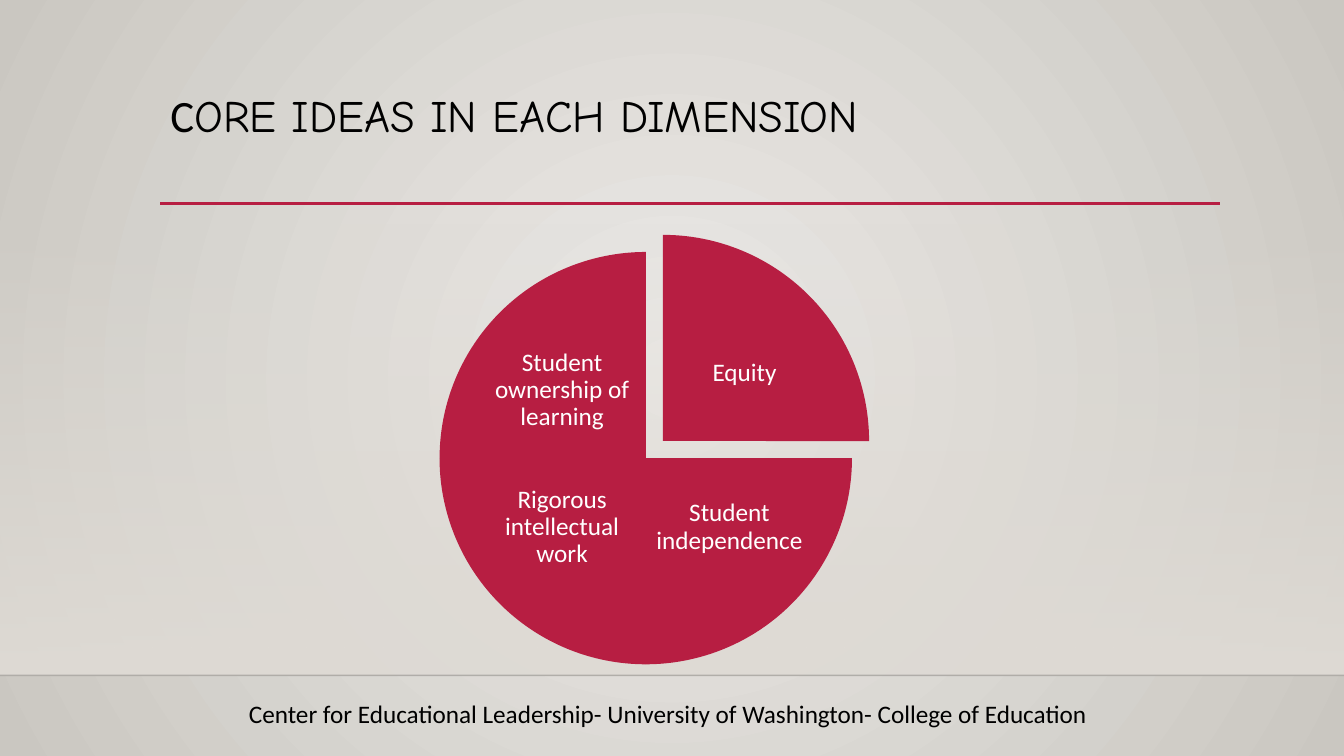
from dataclasses import dataclass

from lxml.etree import SubElement
from pptx import Presentation
from pptx.dml.color import RGBColor
from pptx.dml.fill import FillFormat
from pptx.enum.shapes import MSO_CONNECTOR, MSO_SHAPE
from pptx.enum.text import MSO_ANCHOR, MSO_AUTO_SIZE, PP_ALIGN
from pptx.oxml.ns import qn
from pptx.slide import Slide
from pptx.text.text import Font
from pptx.util import Inches, Pt


@dataclass(frozen=True)
class Theme:
    accent: str = "B71E42"
    ink: str = "000000"
    light: str = "FFFFFF"
    glow: str = "ECEAE7"
    edge: str = "CAC7C1"
    floor: str = "DFDBD5"
    body_font: str = "Calibri"
    title_font: str = "Comic Neue"
    title_size: int = 32
    body_size: int = 18


@dataclass(frozen=True)
class Dimension:
    label: str
    label_left: float
    label_top: float
    pie_left: float = 4.36
    pie_top: float = 2.5


THEME = Theme()
PIE_SIZE = 4.09
QUARTER_TURN = 54
FIRST_ANGLE = 162
DIMENSIONS = [
    Dimension("Equity", 6.63, 3.09, 4.53, 2.33),
    Dimension("Student independence", 6.48, 4.62),
    Dimension("Rigorous intellectual work", 4.82, 4.62),
    Dimension("Student ownership of learning", 4.82, 3.26),
]


def style_font(font: Font, name: str, size: int, color: str) -> None:
    font.name = name
    font.size = Pt(size)
    font.color.rgb = RGBColor.from_string(color)


def set_gradient(fill: FillFormat, start: str, end: str) -> None:
    fill.gradient()
    for stop, color, position in zip(fill.gradient_stops, (start, end), (0, 1)):
        stop.color.rgb = RGBColor.from_string(color)
        stop.position = position


def draw_background(page: Slide) -> None:
    set_gradient(page.background.fill, THEME.glow, THEME.edge)
    gradient = page._element.find(".//" + qn("a:gradFill"))
    gradient.remove(gradient.find(qn("a:lin")))
    circle = SubElement(gradient, qn("a:path"), path="circle")
    SubElement(circle, qn("a:fillToRect"), l="50000", t="50000", r="50000", b="50000")


def draw_floor(page: Slide) -> None:
    floor = page.shapes.add_shape(
        MSO_SHAPE.RECTANGLE, 0, Inches(2.21), Inches(13.33), Inches(4.49)
    )
    floor.shadow.inherit = False
    floor.line.fill.background()
    set_gradient(floor.fill, THEME.floor, THEME.floor)
    floor.fill.gradient_angle = 270
    first_color = floor._element.spPr.find(".//" + qn("a:srgbClr"))
    SubElement(first_color, qn("a:alpha"), val="0")


def draw_rule(
    page: Slide, left: float, right: float, top: float,
    color: str, width: float, opacity: int = 100,
) -> None:
    rule = page.shapes.add_connector(
        MSO_CONNECTOR.STRAIGHT, Inches(left), Inches(top), Inches(right), Inches(top)
    )
    rule.line.width = Pt(width)
    rule.line.color.rgb = RGBColor.from_string(color)
    properties = rule._element.spPr
    if opacity < 100:
        line_color = properties.find(".//" + qn("a:srgbClr"))
        SubElement(line_color, qn("a:alpha"), val=str(opacity * 1000))
    SubElement(properties, qn("a:effectLst"))


def draw_title(page: Slide) -> None:
    title = page.shapes.title
    title.left, title.top = Inches(1.59), Inches(0.88)
    title.width, title.height = Inches(10.5), Inches(1.15)
    frame = title.text_frame
    frame.auto_size = MSO_AUTO_SIZE.NONE
    frame.vertical_anchor = MSO_ANCHOR.TOP
    para = frame.paragraphs[0]
    para.alignment = PP_ALIGN.LEFT
    para.line_spacing = 0.9
    for text, font_name in (
        ("C", THEME.body_font),
        ("ORE IDEAS IN EACH DIMENSION", THEME.title_font),
    ):
        span = para.add_run()
        span.text = text
        style_font(span.font, font_name, THEME.title_size, THEME.ink)


def draw_slice(page: Slide, dimension: Dimension, index: int) -> None:
    start = (FIRST_ANGLE + index * QUARTER_TURN) % (4 * QUARTER_TURN)
    pie = page.shapes.add_shape(
        MSO_SHAPE.PIE, Inches(dimension.pie_left), Inches(dimension.pie_top),
        Inches(PIE_SIZE), Inches(PIE_SIZE),
    )
    pie.adjustments[0] = start
    pie.adjustments[1] = (start + QUARTER_TURN) % (4 * QUARTER_TURN)
    pie.shadow.inherit = False
    pie.fill.solid()
    pie.fill.fore_color.rgb = RGBColor.from_string(THEME.accent)
    pie.line.fill.background()


def draw_label(page: Slide, dimension: Dimension) -> None:
    box = page.shapes.add_textbox(
        Inches(dimension.label_left), Inches(dimension.label_top),
        Inches(1.51), Inches(1.22),
    )
    frame = box.text_frame
    frame.word_wrap = True
    frame.vertical_anchor = MSO_ANCHOR.MIDDLE
    frame.margin_left = frame.margin_right = Inches(0.03)
    frame.margin_top = frame.margin_bottom = Inches(0.03)
    para = frame.paragraphs[0]
    para.text = dimension.label
    para.alignment = PP_ALIGN.CENTER
    para.line_spacing = 0.9
    style_font(para.font, THEME.body_font, THEME.body_size, THEME.light)


def draw_source(page: Slide) -> None:
    box = page.shapes.add_textbox(Inches(2.37), Inches(6.88), Inches(8.94), Inches(0.4))
    frame = box.text_frame
    frame.word_wrap = True
    frame.auto_size = MSO_AUTO_SIZE.SHAPE_TO_FIT_TEXT
    para = frame.paragraphs[0]
    para.text = (
        "Center for Educational Leadership- University of Washington- "
        "College of Education"
    )
    style_font(para.font, THEME.body_font, THEME.body_size, THEME.ink)


def main() -> None:
    deck = Presentation()
    deck.slide_width, deck.slide_height = Inches(13.33), Inches(7.5)
    page = deck.slides.add_slide(deck.slide_layouts.get_by_name("Title Only"))
    draw_background(page)
    draw_floor(page)
    draw_rule(page, 0, 13.33, 6.7, THEME.ink, 1, opacity=20)
    draw_rule(page, 1.59, 12.1, 2.02, THEME.accent, 2.5)
    draw_title(page)
    for index, dimension in enumerate(DIMENSIONS):
        draw_slice(page, dimension, index)
        draw_label(page, dimension)
    draw_source(page)
    deck.save("out.pptx")


if __name__ == "__main__":
    main()
